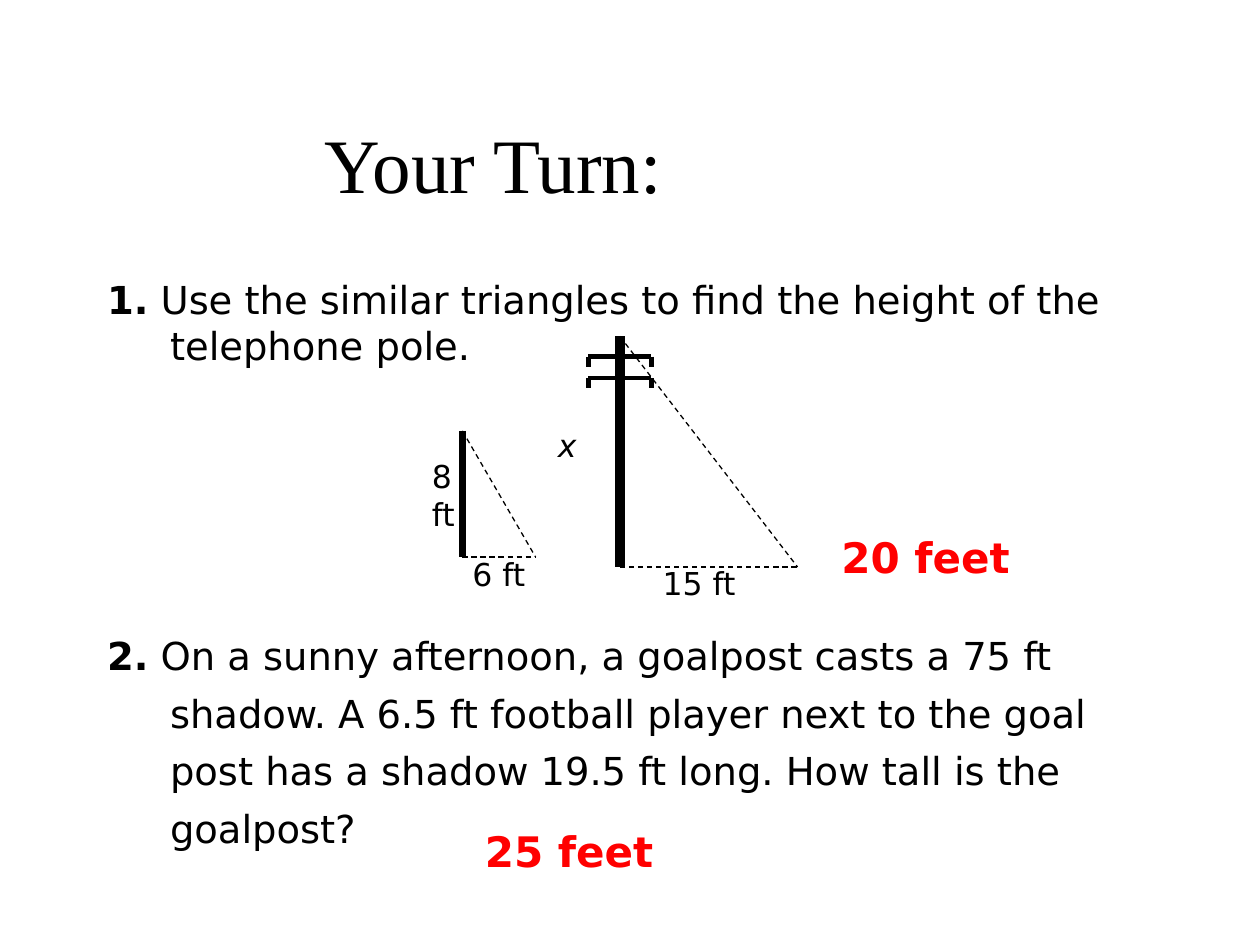
import pptx
import pptx.util
import pptx.dml.color
import pptx.enum.dml
import pptx.enum.shapes
import pptx.enum.text
import pptx.oxml

Inches = pptx.util.Inches
Pt = pptx.util.Pt
Anchor = pptx.enum.text.MSO_ANCHOR
Align = pptx.enum.text.PP_ALIGN


def color(code):
    return pptx.dml.color.RGBColor.from_string(code)


def write(para, text, size, code="000000", bold=False, slant=False, font="DejaVu Sans"):
    run = para.add_run()
    run.text = text
    run.font.name = font
    run.font.size = Pt(size)
    run.font.bold = bold
    run.font.italic = slant
    run.font.color.rgb = color(code)


deck = pptx.Presentation()
deck.slide_width = Inches(10)
deck.slide_height = Inches(7.5)
slide = deck.slides.add_slide(deck.slide_layouts[1])

title = slide.shapes.title
title.left, title.top = Inches(0.75), Inches(0.67)
title.width, title.height = Inches(6.33), Inches(1.25)
title.text_frame.vertical_anchor = Anchor.MIDDLE
para = title.text_frame.paragraphs[0]
para.alignment = Align.CENTER
write(para, "Your Turn:", 44, font="Times New Roman")

body = slide.placeholders[1]
body.left, body.top = Inches(0.75), Inches(2.14)
body.width, body.height = Inches(8.67), Inches(4.74)
frame = body.text_frame
frame.vertical_anchor = Anchor.TOP
tasks = [
    ("1.", " Use the similar triangles to find the height of the telephone pole.", 1, 0),
    ("2.", " On a sunny afternoon, a goalpost casts a 75 ft shadow. A 6.5 ft football "
     "player next to the goal post has a shadow 19.5 ft long. How tall is the goalpost?",
     1.25, 144),
]
for place, (mark, text, pitch, gap) in enumerate(tasks):
    para = frame.add_paragraph() if place else frame.paragraphs[0]
    props = para._p.get_or_add_pPr()
    props.set("marL", str(Inches(0.5)))
    props.set("indent", str(Inches(-0.5)))
    pptx.oxml.ns  # noqa
    props.append(props.makeelement(pptx.oxml.ns.qn("a:buNone"), {}))
    para.line_spacing = pitch
    para.space_before = Pt(gap)
    write(para, mark, 22, bold=True)
    write(para, text, 22)

foot, pole = 3.67, 4.92
lines = [
    (foot, 3.42, foot, 4.42, 3.75, False),
    (foot, 3.42, 4.25, 4.42, 0.75, True),
    (foot, 4.42, 4.25, 4.42, 0.75, True),
    (pole, 2.67, pole, 4.5, 6, False),
    (pole, 2.67, 6.33, 4.5, 0.75, True),
    (pole, 4.5, 6.33, 4.5, 0.75, True),
]
for bar in (2.83, 3):
    lines.append((pole - 0.25, bar, pole + 0.25, bar, 2.75, False))
    for end in (pole - 0.25, pole + 0.25):
        lines.append((end, bar, end, bar + 0.08, 2.5, False))

for left, top, right, low, width, dash in lines:
    line = slide.shapes.add_connector(
        pptx.enum.shapes.MSO_CONNECTOR.STRAIGHT,
        Inches(left), Inches(top), Inches(right), Inches(low))
    line.line.color.rgb = color("000000")
    line.line.width = Pt(width)
    if dash:
        line.line.dash_style = pptx.enum.dml.MSO_LINE.DASH
    props = line._element.spPr
    props.append(props.makeelement(pptx.oxml.ns.qn("a:effectLst"), {}))

labels = [
    ("8 ft", 3.33, 3.58, 0.42, 0.7, 18, "000000", False, False),
    ("6 ft", 3.65, 4.36, 0.66, 0.4, 18, "000000", False, False),
    ("x", 4.33, 3.33, 0.33, 0.4, 18, "000000", False, True),
    ("15 ft", 5.16, 4.43, 0.92, 0.4, 18, "000000", False, False),
    ("20 feet", 6.58, 4.17, 2, 0.5, 24, "FF0000", True, False),
    ("25 feet", 3.75, 6.5, 5.33, 0.5, 24, "FF0000", True, False),
]
for text, left, top, width, height, size, code, bold, slant in labels:
    box = slide.shapes.add_textbox(Inches(left), Inches(top), Inches(width), Inches(height))
    box.text_frame.word_wrap = True
    box.text_frame.vertical_anchor = Anchor.MIDDLE if bold else Anchor.TOP
    write(box.text_frame.paragraphs[0], text, size, code, bold, slant)

deck.save("out.pptx")
